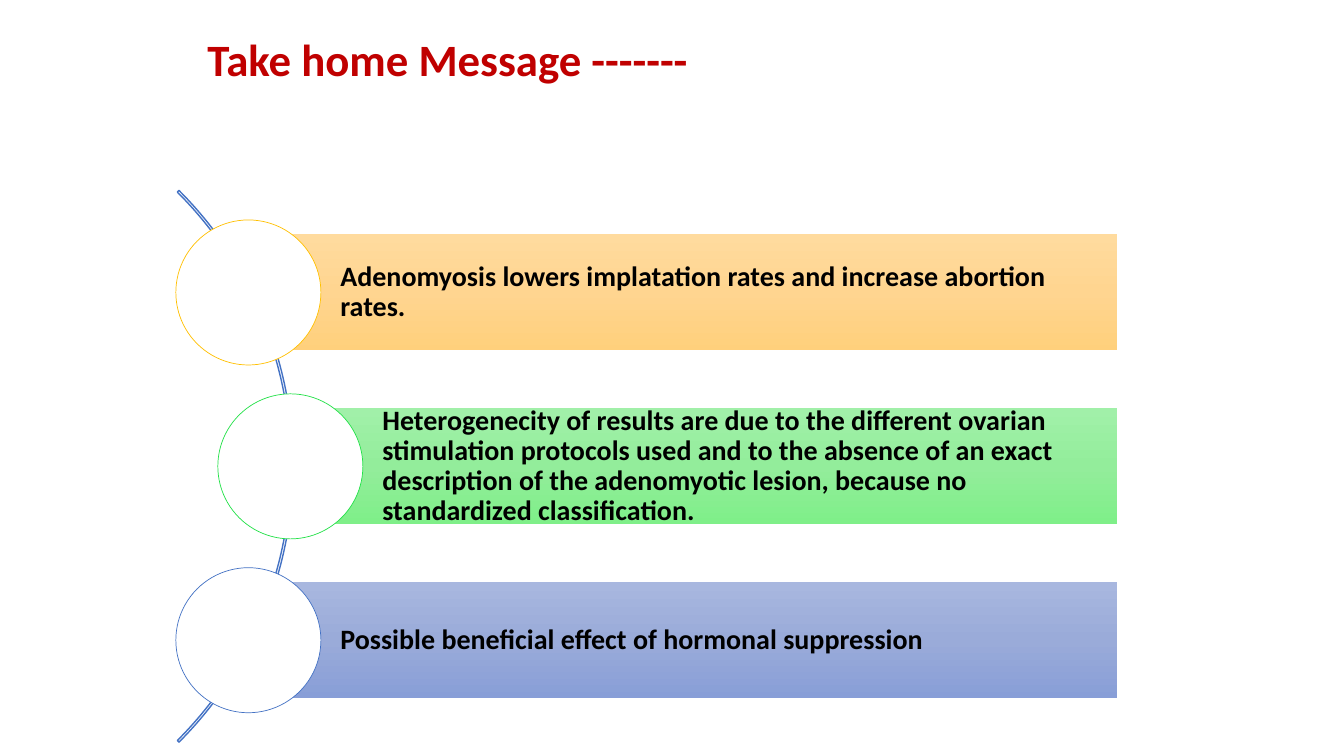
from copy import deepcopy
from dataclasses import dataclass

from pptx import Presentation
from pptx.dml.color import RGBColor
from pptx.enum.shapes import MSO_SHAPE
from pptx.enum.text import MSO_ANCHOR, MSO_AUTO_SIZE, PP_ALIGN
from pptx.oxml.ns import qn
from pptx.util import Pt

ARC, BAR, CIRCLE = MSO_SHAPE.BLOCK_ARC, MSO_SHAPE.RECTANGLE, MSO_SHAPE.OVAL
LEFT = PP_ALIGN.LEFT
TOP, MIDDLE = MSO_ANCHOR.TOP, MSO_ANCHOR.MIDDLE
FIT_SHAPE = MSO_AUTO_SIZE.SHAPE_TO_FIT_TEXT


@dataclass(frozen=True)
class Theme:
    font: str = "Calibri"
    title_size: int = 32
    message_size: int = 20
    title: str = "C00000"
    message: str = "000000"
    circle: str = "FFFFFF"
    blue: str = "4472C4"
    amber: str = "FFC000"
    green: str = "23E148"
    amber_bar: tuple = ("FFDB9E", "FFD590", "FFD07C")
    green_bar: tuple = ("A1F0A9", "93ED9B", "7FEF89")
    blue_bar: tuple = ("A8B7DF", "9AABD9", "889ED7")


THEME = Theme()


def set_text(shape, text, size, color, anchor):
    frame = shape.text_frame
    frame.word_wrap = True
    frame.vertical_anchor = anchor
    paragraph = frame.paragraphs[0]
    paragraph.text = text
    paragraph.alignment = LEFT
    font = paragraph.font
    font.name, font.size, font.bold = THEME.font, Pt(size), True
    font.color.rgb = RGBColor.from_string(color)
    return paragraph


def fill_downward(shape, colors):
    """Fill with a top-to-bottom gradient of three evenly spaced colours."""
    shape.fill.gradient()
    shape.fill.gradient_angle = 270
    first_stop = shape._element.spPr.find(".//" + qn("a:gs"))
    first_stop.addnext(deepcopy(first_stop))
    for index, (stop, color) in enumerate(zip(shape.fill.gradient_stops, colors)):
        stop.position = index / 2
        stop.color.rgb = RGBColor.from_string(color)


presentation = Presentation()
presentation.slide_width, presentation.slide_height = Pt(960), Pt(540)
slide = presentation.slides.add_slide(presentation.slide_layouts[5])
shapes = slide.shapes

title = shapes.title
title.left, title.top, title.width, title.height = Pt(141), Pt(18.7), Pt(527), Pt(46)
set_text(title, "Take home Message -------", THEME.title_size, THEME.title, TOP)
title.text_frame.auto_size = FIT_SHAPE

# The arc and the rows share one vertical centre
middle_y = 333.1
arc_size = 557.3
arc = shapes.add_shape(ARC, Pt(-347.8), Pt(middle_y - arc_size / 2), Pt(arc_size), Pt(arc_size))
arc.adjustments[0], arc.adjustments[1], arc.adjustments[2] = 189, 27, 0.003
arc.shadow.inherit = False
arc.fill.background()
arc.line.color.rgb = RGBColor.from_string(THEME.blue)
arc.line.width = Pt(1)

row_step, bar_height, bar_right, circle_size = 124.2, 82.8, 798, 103.6
messages = [
    (177.4, THEME.amber, THEME.amber_bar,
     "Adenomyosis lowers implatation rates and increase abortion rates."),
    (207.4, THEME.green, THEME.green_bar,
     "Heterogenecity of results are due to the different ovarian stimulation protocols used "
     "and to the absence of an exact description of the adenomyotic lesion, because no "
     "standardized classification."),
    (177.4, THEME.blue, THEME.blue_bar,
     "Possible beneficial effect of hormonal suppression"),
]
for row, (center_x, outline, bar_colors, message) in enumerate(messages):
    center_y = middle_y + (row - 1) * row_step

    bar = shapes.add_shape(BAR, Pt(center_x), Pt(center_y - bar_height / 2),
                           Pt(bar_right - center_x), Pt(bar_height))
    bar.shadow.inherit = False
    fill_downward(bar, bar_colors)
    bar.line.fill.background()
    paragraph = set_text(bar, message, THEME.message_size, THEME.message, MIDDLE)
    paragraph.line_spacing = 0.9
    frame = bar.text_frame
    frame.margin_left = Pt(65.7)
    frame.margin_top = frame.margin_right = frame.margin_bottom = Pt(4)

    circle = shapes.add_shape(CIRCLE, Pt(center_x - circle_size / 2),
                              Pt(center_y - circle_size / 2), Pt(circle_size), Pt(circle_size))
    circle.shadow.inherit = False
    circle.fill.solid()
    circle.fill.fore_color.rgb = RGBColor.from_string(THEME.circle)
    circle.line.color.rgb = RGBColor.from_string(outline)
    circle.line.width = Pt(0.5)

presentation.save("out.pptx")
